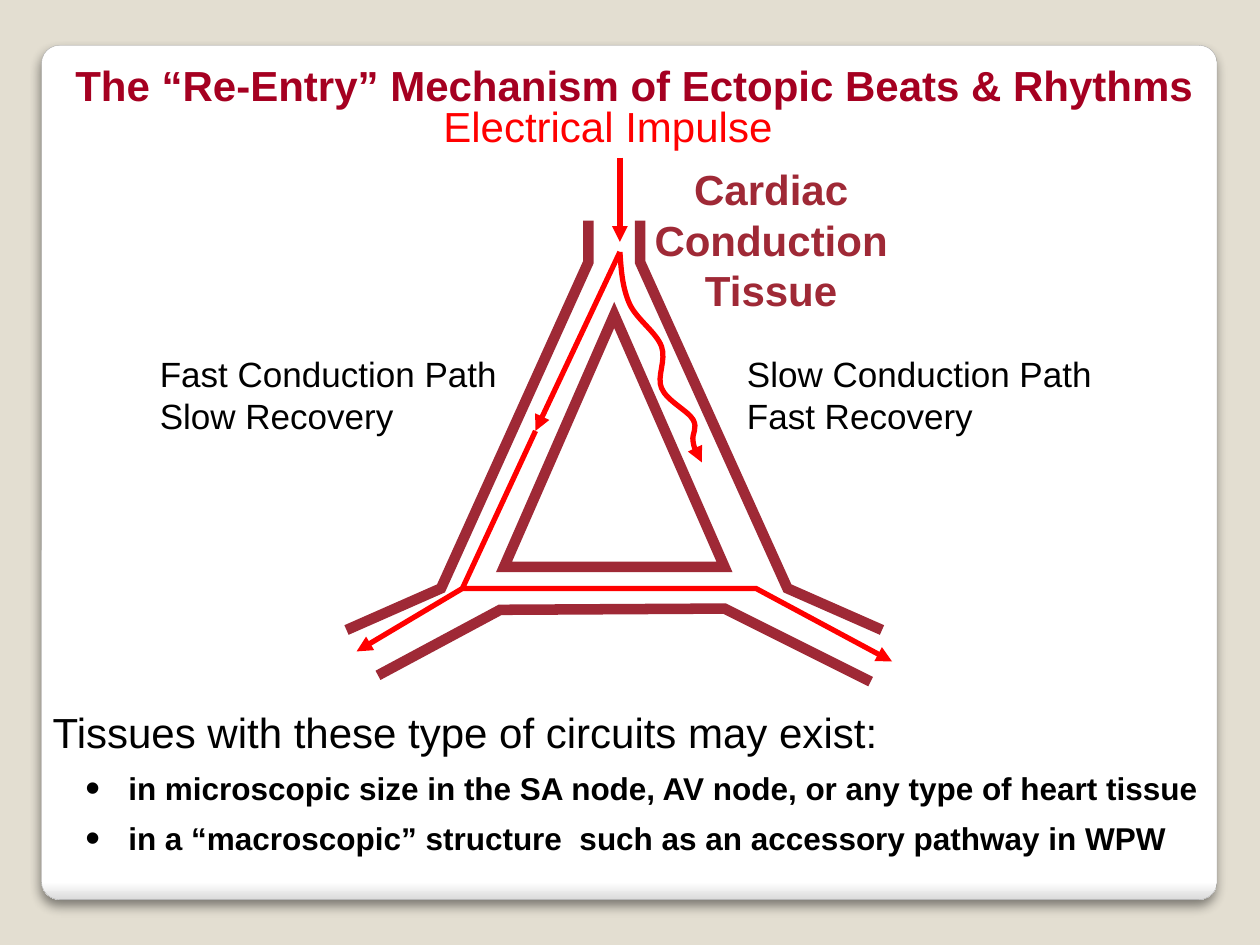
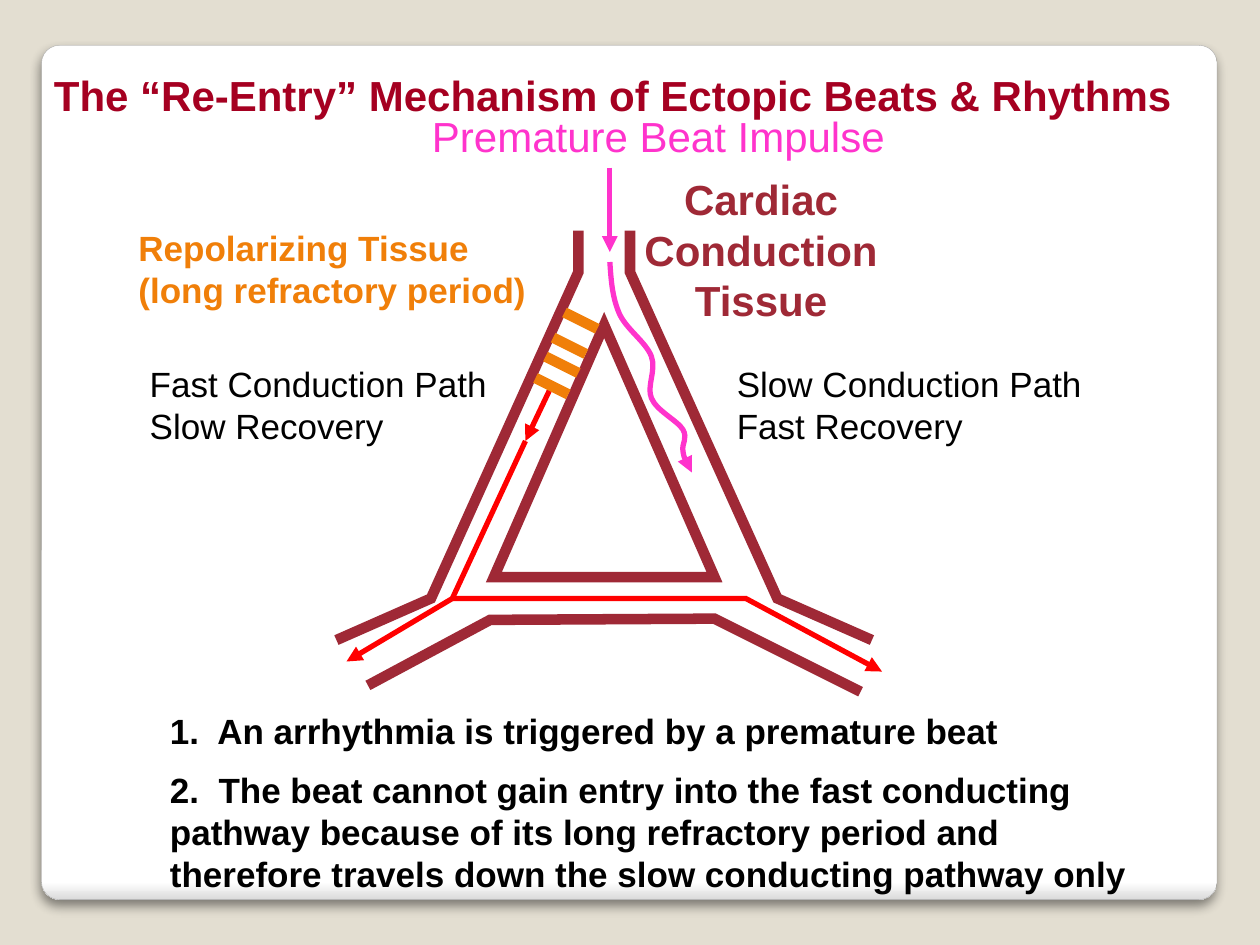
"""Build two slides on the re-entry mechanism of ectopic beats."""
from lxml.etree import SubElement
from pptx import Presentation
from pptx.dml.color import RGBColor
from pptx.enum.shapes import MSO_CONNECTOR, MSO_SHAPE
from pptx.enum.text import PP_ALIGN
from pptx.oxml import parse_xml
from pptx.oxml.ns import nsdecls, qn
from pptx.util import Inches, Pt

BACKDROP = RGBColor(0xE3, 0xDE, 0xD1)
WHITE = RGBColor(0xFF, 0xFF, 0xFF)
CARD_FOOT = RGBColor(0xDA, 0xDA, 0xDA)
CARD_EDGE = RGBColor(0xA4, 0xA4, 0xA4)
TITLE_RED = RGBColor(0xA5, 0x00, 0x21)
TISSUE = RGBColor(0x9F, 0x29, 0x36)
IMPULSE = RGBColor(0xFF, 0x00, 0x00)
PREMATURE = RGBColor(0xFF, 0x33, 0xCC)
REFRACTORY = RGBColor(0xF0, 0x7F, 0x09)
BLACK = RGBColor(0x00, 0x00, 0x00)

CARD_SHADOW = (
    f'<a:effectLst {nsdecls("a")}><a:outerShdw blurRad="76200" dist="50800" dir="5400000" '
    'algn="tl" rotWithShape="0"><a:srgbClr val="000000"><a:alpha val="45000"/></a:srgbClr>'
    '</a:outerShdw></a:effectLst>')

TITLE = "The “Re-Entry” Mechanism of Ectopic Beats & Rhythms"
TISSUE_WALLS = [
    [(4.67, 1.75), (4.67, 2.08), (3.5, 4.67), (2.75, 5)],
    [(5.08, 1.75), (5.08, 2.08), (6.25, 4.67), (7, 5)],
    [(3, 5.36), (3.97, 4.84), (5.75, 4.83), (6.91, 5.41)],
]
EXIT_PATHS = [
    [(3.67, 4.67), (6, 4.67), (7.08, 5.25)],
    [(4.25, 3.42), (3.67, 4.67), (2.83, 5.17)],
]
SLOW_PATH = [
    (4.92, 2), (4.93, 2.15), (4.94, 2.29), (5, 2.42), (5.06, 2.54), (5.21, 2.64), (5.25, 2.75),
    (5.29, 2.86), (5.21, 2.99), (5.25, 3.08), (5.29, 3.18), (5.46, 3.26), (5.5, 3.33),
    (5.54, 3.4), (5.49, 3.44), (5.5, 3.5), (5.51, 3.56), (5.54, 3.61), (5.57, 3.67),
]


def add_text(slide, text, left, top, width, height, size=20, color=BLACK, bold=False,
             align=PP_ALIGN.LEFT, wrap=True, before=0, after=0):
    frame = slide.shapes.add_textbox(
        Inches(left), Inches(top), Inches(width), Inches(height)).text_frame
    frame.word_wrap = wrap
    frame.text = text
    for paragraph in frame.paragraphs:
        paragraph.alignment = align
        paragraph.space_before, paragraph.space_after = Pt(before), Pt(after)
        font = paragraph.runs[0].font
        font.name, font.size, font.bold = "Arial", Pt(size), bold
        font.color.rgb = color
    frame.paragraphs[0].space_before = Pt(0)
    return frame


def add_stroke(slide, points, color, width=3, arrow=False, curved=False, shift=0):
    places = [(Inches(x - shift), Inches(y + shift)) for x, y in points]
    if len(places) == 2:
        stroke = slide.shapes.add_connector(MSO_CONNECTOR.STRAIGHT, *places[0], *places[1])
    else:
        builder = slide.shapes.build_freeform(*places[0])
        builder.add_line_segments(places[1:], close=False)
        stroke = builder.convert_to_shape()
        stroke.fill.background()
    stroke.line.color.rgb = color
    stroke.line.width = Pt(width)
    properties = stroke._element.spPr
    outline = properties.find(qn("a:ln"))
    SubElement(outline, qn("a:miter"), lim="800000")
    if arrow:
        SubElement(outline, qn("a:tailEnd"), type="triangle")
    SubElement(properties, qn("a:effectLst"))
    if curved:
        segments = list(properties.iter(qn("a:lnTo")))
        track = segments[0].getparent()
        for first in range(0, len(segments), 3):
            curve = SubElement(track, qn("a:cubicBezTo"))
            for segment in segments[first:first + 3]:
                curve.append(segment[0])
                track.remove(segment)


deck = Presentation()
deck.slide_width, deck.slide_height = Inches(10), Inches(7.5)
backdrop = deck.slide_master.background.fill
backdrop.solid()
backdrop.fore_color.rgb = BACKDROP

scenes = [
    dict(shift=0, title_at=(0.5, 0.42), source="Electrical Impulse",
         source_at=(3.42, 0.75, 2.82), color=IMPULSE, fast_start=(4.92, 2)),
    dict(shift=0.08, title_at=(0.33, 0.5), source="Premature Beat Impulse",
         source_at=(3.33, 0.83, 3.8), color=PREMATURE, fast_start=(4.44, 3.02)),
]
slides = []
for scene in scenes:
    slide = deck.slides.add_slide(deck.slide_layouts[6])
    slides.append(slide)
    shift, color = scene["shift"], scene["color"]

    card = slide.shapes.add_shape(
        MSO_SHAPE.ROUNDED_RECTANGLE, Inches(0.33), Inches(0.36), Inches(9.33), Inches(6.78))
    card.adjustments[0] = 0.021
    card.fill.gradient()
    card.fill.gradient_angle = 270
    for stop, position, shade in zip(card.fill.gradient_stops, (0.98, 1), (WHITE, CARD_FOOT)):
        stop.position, stop.color.rgb = position, shade
    card.line.color.rgb = CARD_EDGE
    card.line.width = Pt(0.16)
    card._element.spPr.append(parse_xml(CARD_SHADOW))

    island = slide.shapes.add_shape(
        MSO_SHAPE.ISOSCELES_TRIANGLE, Inches(4 - shift), Inches(2.5 + shift),
        Inches(1.75), Inches(2))
    island.fill.solid()
    island.fill.fore_color.rgb = WHITE
    island.line.color.rgb = TISSUE
    island.line.width = Pt(6)
    SubElement(island._element.spPr.find(qn("a:ln")), qn("a:miter"), lim="800000")
    island.shadow.inherit = False

    for wall in TISSUE_WALLS:
        add_stroke(slide, wall, TISSUE, width=6, shift=shift)
    for left, label in ((1.17, "Fast Conduction Path\nSlow Recovery"),
                        (5.83, "Slow Conduction Path\nFast Recovery")):
        add_text(slide, label, left - shift, 2.75 + shift, 3.17, 0.77)
    add_text(slide, "Cardiac Conduction Tissue", 5.08 - shift, 1.25 + shift, 2.08, 1.3,
             size=24, color=TISSUE, bold=True, align=PP_ALIGN.CENTER)
    add_text(slide, TITLE, *scene["title_at"], 9.3, 0.5, size=24, color=TITLE_RED, bold=True)
    add_text(slide, scene["source"], *scene["source_at"], 0.5, size=24, color=color, wrap=False)

    add_stroke(slide, [(4.92, 1.25), (4.92, 1.92)], color, arrow=True, shift=shift)
    add_stroke(slide, [scene["fast_start"], (4.25, 3.42)], IMPULSE, arrow=True, shift=shift)
    for exit_path in EXIT_PATHS:
        add_stroke(slide, exit_path, IMPULSE, arrow=True, shift=shift)
    add_stroke(slide, SLOW_PATH, color, arrow=True, curved=True, shift=shift)

circuit_slide, trigger_slide = slides

circuits = add_text(
    circuit_slide,
    "Tissues with these type of circuits may exist:\n"
    "in microscopic size in the SA node, AV node, or any type of heart tissue\n"
    "in a “macroscopic” structure  such as an accessory pathway in WPW",
    0.32, 5.56, 9.5, 1.25, size=24, before=7)
for example in circuits.paragraphs[1:]:
    example.runs[0].font.size = Pt(18)
    example.runs[0].font.bold = True
    layout = example._p.get_or_add_pPr()
    layout.set("marL", str(Inches(0.6)))
    layout.set("indent", str(Inches(-0.34)))
    SubElement(layout, qn("a:buSzPct"), val="133000")
    SubElement(layout, qn("a:buFont"), typeface="Arial")
    SubElement(layout, qn("a:buChar"), char="•")

for left, top in ((4.48, 2.48), (4.39, 2.68), (4.33, 2.83), (4.25, 3)):
    add_stroke(trigger_slide, [(left, top), (left + 0.26, top + 0.13)], REFRACTORY, width=6)
add_text(trigger_slide, "Repolarizing Tissue\n(long refractory period)",
         1, 1.75, 3.42, 0.77, color=REFRACTORY, bold=True)
add_text(trigger_slide,
         "1.  An arrhythmia is triggered by a premature beat\n"
         "2.  The beat cannot gain entry into the fast conducting pathway because of its long "
         "refractory period and therefore travels down the slow conducting pathway only",
         1.25, 5.58, 7.95, 1.64, bold=True, before=5, after=5)

deck.save("out.pptx")
